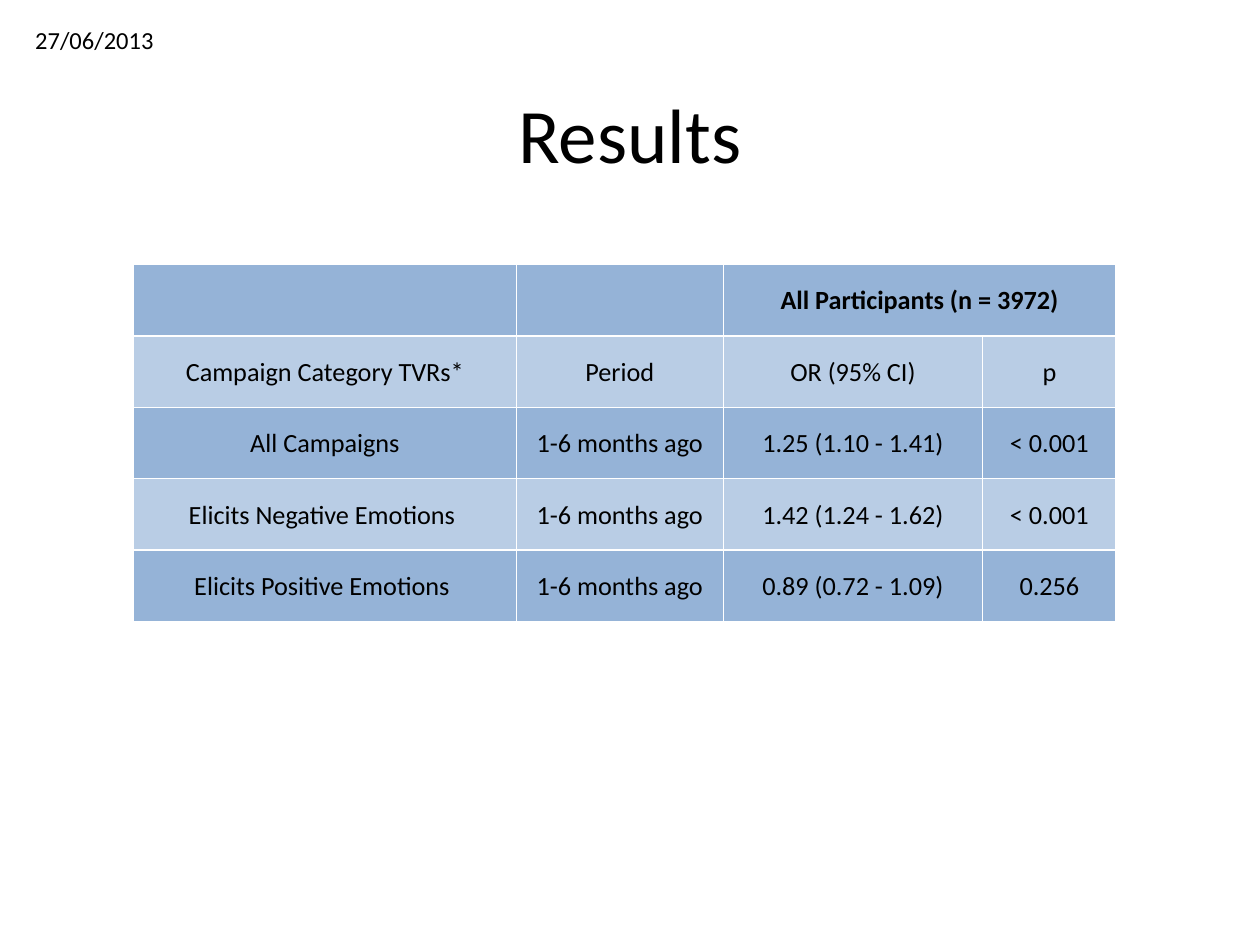
from lxml.etree import SubElement
from pptx import Presentation
from pptx.dml.color import RGBColor
from pptx.enum.text import MSO_ANCHOR, MSO_AUTO_SIZE, PP_ALIGN
from pptx.oxml.ns import qn
from pptx.util import Cm, Pt

BLACK = RGBColor(0x00, 0x00, 0x00)
WHITE = RGBColor(0xFF, 0xFF, 0xFF)
BLUE = RGBColor(0x95, 0xB3, 0xD7)
LIGHT_BLUE = RGBColor(0xB9, 0xCD, 0xE5)

COLUMN_WIDTHS = [7.72, 4.17, 5.23, 2.69]
ROW_HEIGHT = 1.44
PERIOD = "1-6 months ago"
ROWS = [
    ["", "", "All Participants (n = 3972)", ""],
    ["Campaign Category TVRs*", "Period", "OR (95% CI)", "p"],
    ["All Campaigns", PERIOD, "1.25 (1.10 - 1.41)", "< 0.001"],
    ["Elicits Negative Emotions ", PERIOD, "1.42 (1.24 - 1.62)", "< 0.001"],
    ["Elicits Positive Emotions ", PERIOD, "0.89 (0.72 - 1.09)", "0.256"],
]


def write(tf, text, size=15, bold=False, align=PP_ALIGN.CENTER):
    p = tf.paragraphs[0]
    p.alignment = align
    r = p.add_run()
    r.text = text
    r.font.name = "Calibri"
    r.font.size = Pt(size)
    r.font.bold = bold
    r.font.color.rgb = BLACK


def add_date(s):
    sp = s.shapes.add_textbox(Cm(0.46), Cm(0.38), Cm(4.6), Cm(0.86))
    tf = sp.text_frame
    tf.word_wrap = True
    tf.auto_size = MSO_AUTO_SIZE.SHAPE_TO_FIT_TEXT
    write(tf, "27/06/2013", size=14, align=PP_ALIGN.LEFT)


def set_title(s):
    sp = s.shapes.title
    sp.left, sp.top, sp.width, sp.height = Cm(1.27), Cm(1.09), Cm(22.86), Cm(3.18)
    sp.text_frame.vertical_anchor = MSO_ANCHOR.MIDDLE
    write(sp.text_frame, "Results", size=44)


def set_borders(cell, color, width):
    tc_pr = cell._tc.get_or_add_tcPr()
    for side in ("lnL", "lnR", "lnT", "lnB"):
        ln = SubElement(tc_pr, qn(f"a:{side}"), w=str(Pt(width)))
        fill = SubElement(ln, qn("a:solidFill"))
        SubElement(fill, qn("a:srgbClr"), val=str(color))


def format_cell(cell, text, color, bold):
    set_borders(cell, WHITE, 1)
    cell.fill.solid()
    cell.fill.fore_color.rgb = color
    cell.vertical_anchor = MSO_ANCHOR.MIDDLE
    cell.margin_left = cell.margin_right = cell.margin_top = Cm(0.03)
    cell.margin_bottom = 0
    if text:
        write(cell.text_frame, text, bold=bold)


def add_results_table(s):
    table = s.shapes.add_table(
        len(ROWS), len(COLUMN_WIDTHS), Cm(2.69), Cm(5.33),
        Cm(sum(COLUMN_WIDTHS)), Cm(ROW_HEIGHT * len(ROWS)),
    ).table
    for column, width in zip(table.columns, COLUMN_WIDTHS):
        column.width = Cm(width)
    for i, row in enumerate(ROWS):
        table.rows[i].height = Cm(ROW_HEIGHT)
        color = LIGHT_BLUE if i % 2 else BLUE
        for j, text in enumerate(row):
            format_cell(table.cell(i, j), text, color, bold=i == 0)
    table.cell(0, 2).merge(table.cell(0, 3))


def main():
    prs = Presentation()
    prs.slide_width, prs.slide_height = Cm(25.4), Cm(19.05)
    s = prs.slides.add_slide(prs.slide_layouts[5])
    add_date(s)
    set_title(s)
    add_results_table(s)
    prs.save("out.pptx")


if __name__ == "__main__":
    main()
